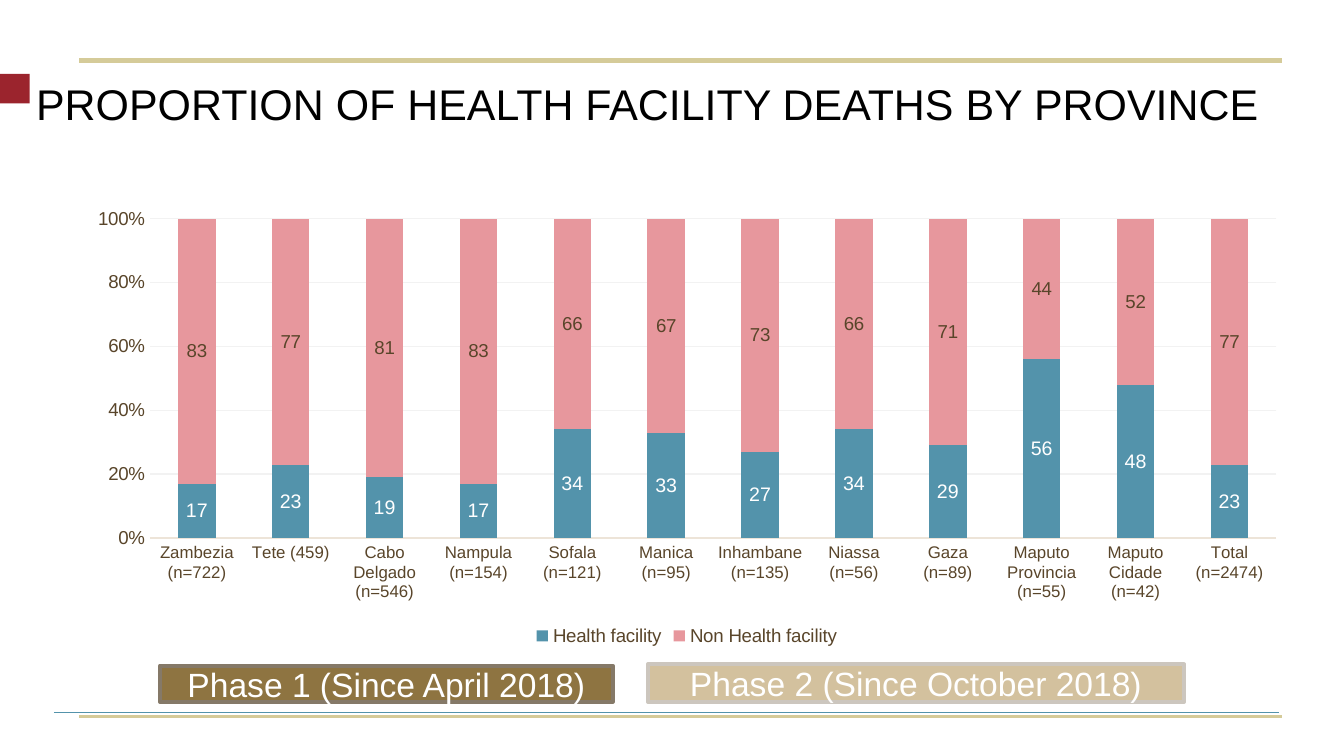
from dataclasses import dataclass

from lxml import etree
from pptx import Presentation
from pptx import util as u
from pptx.chart.data import CategoryChartData
from pptx.dml.color import RGBColor
from pptx.enum import chart as ch
from pptx.enum import shapes, text
from pptx.oxml import parse_xml
from pptx.oxml.ns import nsdecls, qn

WIDE = u.Inches(10)
HIGH = WIDE * 9 // 16
COLS = 1000
CELL = WIDE // COLS
FONT = "Arial"
BROWN, TEAL, PINK, SAND, WHITE = "59452A", "5393AB", "E7979D", "D5CB99", "FFFFFF"


@dataclass
class Box:
    """A block of grid cells."""
    col: int
    row: float
    wide: int
    high: int

    def emu(self) -> list[int]:
        """Give left, top, width and height."""
        return [int(n * CELL) for n in (self.col, self.row, self.wide, self.high)]


@dataclass
class Rule:
    """A horizontal line."""
    row: int
    start: int
    end: int
    hue: str
    width: float


@dataclass
class Phase:
    """A labelled phase bar."""
    box: Box
    label: str
    fill: str
    edge: str


@dataclass
class Series:
    """A chart series with its label format."""
    name: str
    values: list[int]
    fill: str
    ink: str
    size: float


RULES = [
    Rule(530, 40, 952, TEAL, 0.5),
    Rule(45, 59, 954, SAND, 3),
    Rule(533, 59, 954, SAND, 1.5),
]
PHASES = [
    Phase(Box(119, 495.3, 337, 27), "Phase 1 (Since April 2018)", "8E7441", "857968"),
    Phase(Box(482, 494.3, 399, 28), "Phase 2 (Since October 2018)", "D3C19E", "CCC6BE"),
]
CATS = ["Zambezia (n=722)", "Tete (459)", "Cabo Delgado (n=546)", "Nampula (n=154)",
        "Sofala (n=121)", "Manica (n=95)", "Inhambane (n=135)", "Niassa (n=56)",
        "Gaza (n=89)", "Maputo Provincia (n=55)", "Maputo Cidade (n=42)",
        "Total (n=2474)"]
SHARE = [17, 23, 19, 17, 34, 33, 27, 34, 29, 56, 48, 23]
SERIES = [
    Series("Health facility", SHARE, TEAL, WHITE, 10.5),
    Series("Non Health facility", [100 - n for n in SHARE], PINK, BROWN, 10),
]


def color(hue: str) -> RGBColor:
    """Turn a hex string into a colour."""
    return RGBColor.from_string(hue)


def paint(fill, hue: str) -> None:
    """Fill with one solid colour."""
    fill.solid()
    fill.fore_color.rgb = color(hue)


def stroke(line, hue: str, width: float) -> None:
    """Set the colour and width of a line."""
    paint(line.fill, hue)
    line.width = u.Pt(width)


def style(font, hue: str, size: float) -> None:
    """Set the typeface, colour and size of a font."""
    font.name, font.size, font.bold = FONT, u.Pt(size), False
    font.color.rgb = color(hue)


def write(shape, words: str, *, hue: str, size: float, pad: float = 0.1,
          align=text.PP_ALIGN.LEFT, anchor=text.MSO_ANCHOR.TOP, lead=None) -> None:
    """Put one formatted paragraph in a shape."""
    frame = shape.text_frame
    frame.word_wrap, frame.vertical_anchor = True, anchor
    frame.margin_left = frame.margin_right = u.Inches(0.1)
    frame.margin_top = frame.margin_bottom = u.Inches(pad)
    para = frame.paragraphs[0]
    para.alignment = align
    if lead:
        para.line_spacing = u.Pt(lead)
    run = para.add_run()
    run.text = words
    style(run.font, hue, size)


def block(slide, box: Box, fill: str):
    """Draw a plain filled rectangle."""
    shape = slide.shapes.add_shape(shapes.MSO_SHAPE.RECTANGLE, *box.emu())
    shape.shadow.inherit = False
    paint(shape.fill, fill)
    shape.line.fill.background()
    return shape


def rule(slide, item: Rule) -> None:
    """Draw a horizontal line."""
    row = item.row * CELL
    line = slide.shapes.add_connector(
        shapes.MSO_CONNECTOR.STRAIGHT, item.start * CELL, row, item.end * CELL, row)
    stroke(line.line, item.hue, item.width)
    etree.SubElement(line._element.spPr, qn("a:effectLst"))


def phase(slide, item: Phase) -> None:
    """Draw a phase bar with its label."""
    shape = block(slide, item.box, item.fill)
    stroke(shape.line, item.edge, 2)
    write(shape, item.label, hue=WHITE, size=18, pad=0.05,
          align=text.PP_ALIGN.CENTER, anchor=text.MSO_ANCHOR.MIDDLE)


def place(chart, **shares: float) -> None:
    """Fix the inner plot area as shares of the chart."""
    area = chart._chartSpace.chart.plotArea
    for old in area.findall(qn("c:layout")):
        area.remove(old)
    parts = "".join(f'<c:{key} val="{val}"/>' for key, val in shares.items())
    area.insert(0, parse_xml(
        f'<c:layout {nsdecls("c")}><c:manualLayout><c:layoutTarget val="inner"/>'
        f'<c:xMode val="edge"/><c:yMode val="edge"/>{parts}</c:manualLayout></c:layout>'))


def graph(slide, box: Box) -> None:
    """Draw the stacked column chart."""
    data = CategoryChartData(number_format="0")
    data.categories = CATS
    for item in SERIES:
        data.add_series(item.name, item.values)
    chart = slide.shapes.add_chart(
        ch.XL_CHART_TYPE.COLUMN_STACKED_100, *box.emu(), data).chart
    style(chart.font, BROWN, 10)
    chart.has_title = False
    chart.has_legend = True
    chart.legend.position = ch.XL_LEGEND_POSITION.BOTTOM
    chart.legend.include_in_layout = False
    style(chart.legend.font, BROWN, 10)
    for axis, size in ((chart.category_axis, 9), (chart.value_axis, 10)):
        axis.major_tick_mark = axis.minor_tick_mark = ch.XL_TICK_MARK.NONE
        style(axis.tick_labels.font, BROWN, size)
    stroke(chart.category_axis.format.line, "EDE4D8", 0.75)
    scale = chart.value_axis
    scale.minimum_scale, scale.maximum_scale, scale.major_unit = 0, 1, 0.2
    scale.format.line.fill.background()
    stroke(scale.major_gridlines.format.line, "F2F2F2", 0.75)
    scale.tick_labels.number_format = "0%"
    scale.tick_labels.number_format_is_linked = False
    plot = chart.plots[0]
    plot.gap_width, plot.overlap, plot.vary_by_categories = 150, 100, False
    for bars, item in zip(plot.series, SERIES):
        paint(bars.format.fill, item.fill)
        tags = bars.data_labels
        tags.show_value = True
        tags.number_format, tags.number_format_is_linked = "0", False
        tags.position = ch.XL_LABEL_POSITION.CENTER
        style(tags.font, item.ink, item.size)
    place(chart, x=0.063, y=0.044, w=0.917, h=0.705)


def main() -> None:
    """Build and save the slide."""
    deck = Presentation()
    deck.slide_width, deck.slide_height = WIDE, HIGH
    slide = deck.slides.add_slide(deck.slide_layouts[6])
    block(slide, Box(0, 55, 22, 22), "9B242D")
    for item in RULES:
        rule(slide, item)
    title = slide.shapes.add_textbox(*Box(17, 54, 983, 69).emu())
    write(title, "PROPORTION OF HEALTH FACILITY DEATHS BY PROVINCE",
          hue="000000", size=23, lead=23)
    graph(slide, Box(54, 148, 914, 337))
    for item in PHASES:
        phase(slide, item)
    deck.save("out.pptx")


if __name__ == "__main__":
    main()
